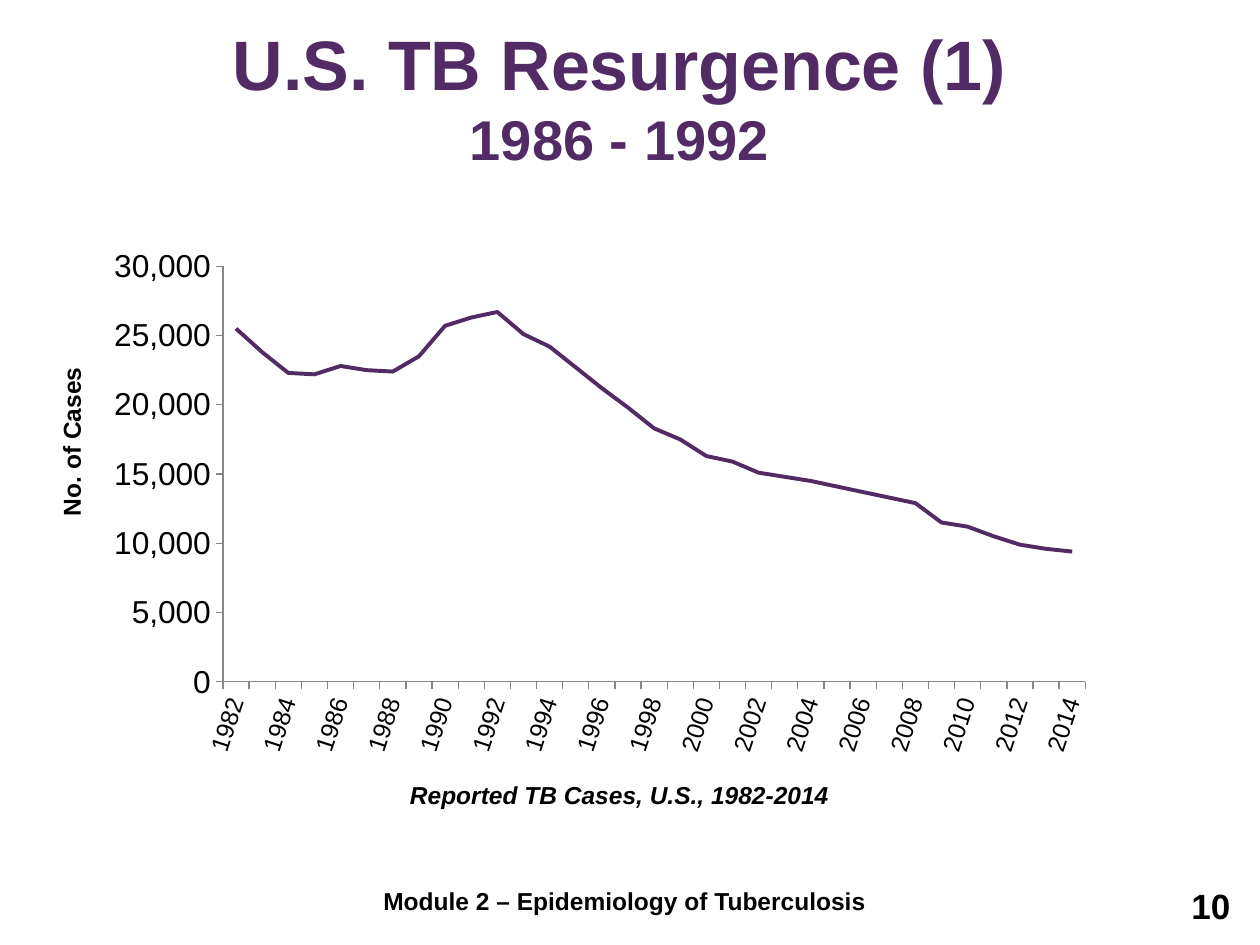
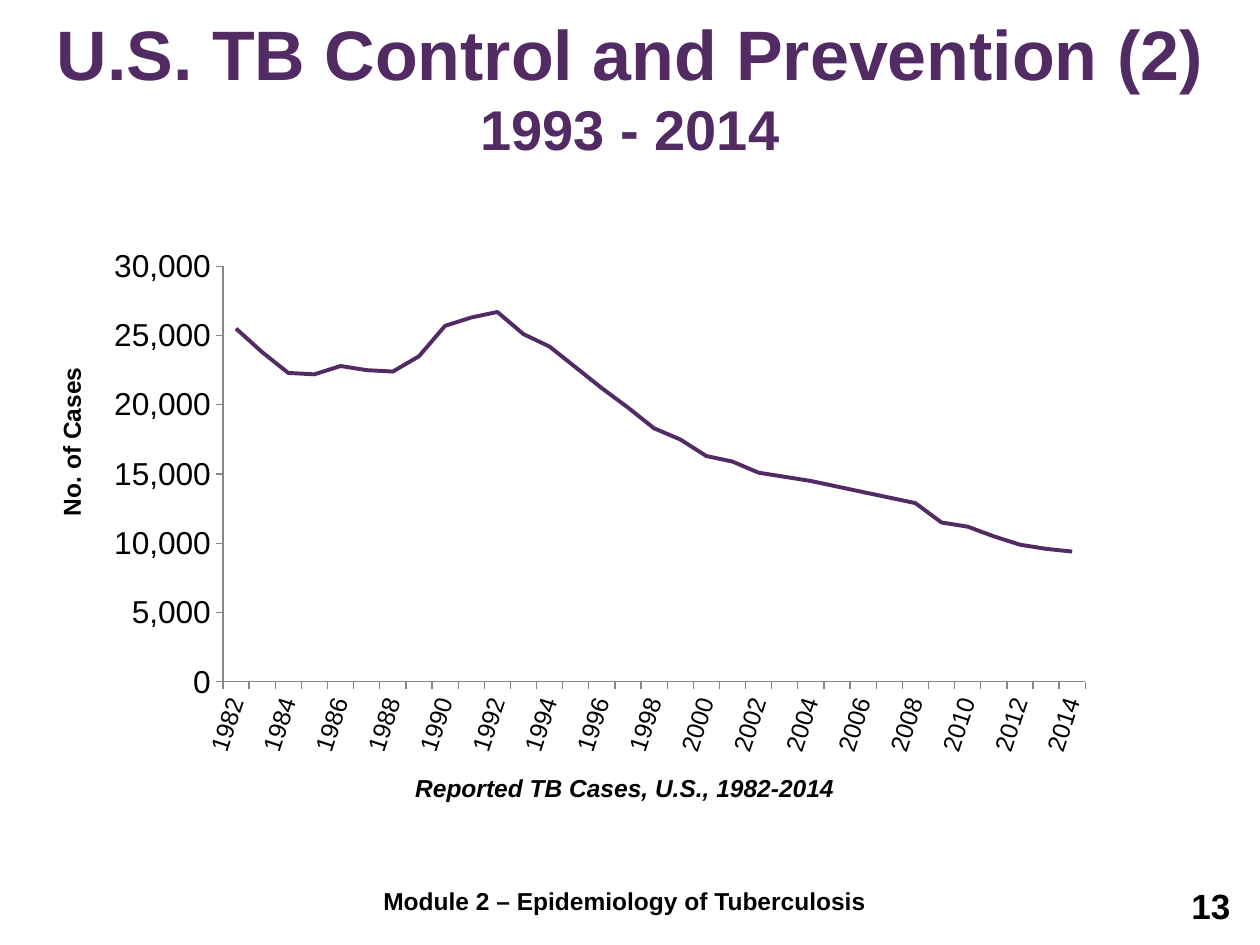
from lxml import etree
from pptx import Presentation
from pptx.chart.data import CategoryChartData
from pptx.dml.color import RGBColor
from pptx.enum.chart import XL_CHART_TYPE, XL_TICK_MARK
from pptx.enum.text import MSO_ANCHOR, MSO_AUTO_SIZE, PP_ALIGN
from pptx.oxml import parse_xml
from pptx.util import Inches, Pt

LINE_CHART = XL_CHART_TYPE.LINE
TICK_OUT, TICK_NONE = XL_TICK_MARK.OUTSIDE, XL_TICK_MARK.NONE
TOP, BOTTOM = MSO_ANCHOR.TOP, MSO_ANCHOR.BOTTOM
NO_FIT = MSO_AUTO_SIZE.NONE
LEFT, CENTER, RIGHT = PP_ALIGN.LEFT, PP_ALIGN.CENTER, PP_ALIGN.RIGHT

PURPLE, BLACK, GREY = "532B64", "000000", "868686"
FONT = "Arial"
COLUMNS, ROWS = 120, 90
CHART_NS = "http://schemas.openxmlformats.org/drawingml/2006/chart"

YEARS = [str(year) for year in range(1982, 2015)]
CASES = [
    25500, 23800, 22300, 22200, 22800, 22500, 22400, 23500, 25700, 26300, 26700,
    25100, 24200, 22700, 21200, 19800, 18300, 17500, 16300, 15900, 15100, 14800,
    14500, 14100, 13700, 13300, 12900, 11500, 11200, 10500, 9900, 9600, 9400,
]
PLOT_AREA = {"x": 0.127, "y": 0.053, "w": 0.852, "h": 0.787}

PAGES = [
    {"heading": "U.S. TB Resurgence (1)", "period": "1986 - 1992", "number": "10",
     "title_at": (5, 0, 108, 17), "caption_at": (33, 73.67, 52, 4)},
    {"heading": "U.S. TB Control and Prevention (2)", "period": "1993 - 2014", "number": "13",
     "title_at": (4, 1, 112, 15), "caption_at": (33.5, 73, 52, 4)},
]

deck = Presentation()
deck.slide_width, deck.slide_height = Inches(10), Inches(7.5)


def grid(left, top, width, height):
    column, row = deck.slide_width / COLUMNS, deck.slide_height / ROWS
    return [int(n * unit) for n, unit in zip((left, top, width, height), (column, row) * 2)]


def write(shape, *lines, sizes=(14,), color=BLACK, italic=False, align=CENTER, anchor=TOP):
    frame = shape.text_frame
    frame.word_wrap, frame.auto_size, frame.vertical_anchor = True, NO_FIT, anchor
    paragraph = frame.paragraphs[0]
    paragraph.alignment = align
    for index, (line, size) in enumerate(zip(lines, sizes)):
        if index:
            paragraph.add_line_break()
        run = paragraph.add_run()
        run.text = line
        run.font.name, run.font.size = FONT, Pt(size)
        run.font.bold, run.font.italic = True, italic
        run.font.color.rgb = RGBColor.from_string(color)


for page in PAGES:
    slide = deck.slides.add_slide(deck.slide_layouts[5])

    title = slide.shapes.title
    title.left, title.top, title.width, title.height = grid(*page["title_at"])
    write(title, page["heading"], page["period"], sizes=(40, 32), color=PURPLE, anchor=BOTTOM)

    footer = slide.shapes.add_textbox(*grid(21, 83.75, 77, 6.25))
    write(footer, "Module 2 – Epidemiology of Tuberculosis")
    page_number = slide.shapes.add_textbox(*grid(90.35, 83.6, 28, 6.25))
    write(page_number, page["number"], sizes=(20,), align=RIGHT)

    caption = slide.shapes.add_textbox(*grid(*page["caption_at"]))
    write(caption, "Reported TB Cases, U.S., 1982-2014", italic=True, anchor=BOTTOM)

    cases_label = slide.shapes.add_textbox(*grid(-4.2, 37.2, 22, 3.6))
    cases_label.rotation = 270
    write(cases_label, "No. of Cases", align=LEFT)
    label_frame = cases_label.text_frame
    label_frame.margin_left = label_frame.margin_right = Inches(0.07)
    label_frame.margin_top = label_frame.margin_bottom = Inches(0.03)

    case_data = CategoryChartData(number_format="#,##0")
    case_data.categories = YEARS
    case_data.add_series("Series 1", CASES)
    chart = slide.shapes.add_chart(LINE_CHART, *grid(9, 22.7, 96.4, 50.3), case_data).chart
    chart.has_legend = chart.has_title = False
    chart.font.name, chart.font.size = FONT, Pt(18.1)
    chart.font.color.rgb = RGBColor.from_string(BLACK)
    chart.plots[0].vary_by_categories = False

    trend = chart.plots[0].series[0]
    trend.smooth = False
    trend.format.line.width = Pt(2.25)
    trend.format.line.color.rgb = RGBColor.from_string(PURPLE)

    year_axis, case_axis = chart.category_axis, chart.value_axis
    for axis, size in ((year_axis, 14.1), (case_axis, 18.1)):
        axis.has_major_gridlines = False
        axis.major_tick_mark, axis.minor_tick_mark = TICK_OUT, TICK_NONE
        axis.format.line.width = Pt(0.75)
        axis.format.line.color.rgb = RGBColor.from_string(GREY)
        axis.tick_labels.font.name, axis.tick_labels.font.size = FONT, Pt(size)
        axis.tick_labels.font.color.rgb = RGBColor.from_string(BLACK)
    case_axis.minimum_scale, case_axis.maximum_scale, case_axis.major_unit = 0, 30000, 5000
    case_axis.tick_labels.number_format = "#,##0"
    case_axis.tick_labels.number_format_is_linked = False

    year_xml = year_axis._element
    label_body = year_xml.find(f"{{{CHART_NS}}}txPr")[0]
    label_body.set("rot", "-4320000")
    label_body.set("vert", "horz")
    no_multi_level = year_xml.find(f"{{{CHART_NS}}}noMultiLvlLbl")
    for tag, step in (("tickLblSkip", 2), ("tickMarkSkip", 1)):
        skip = etree.Element(f"{{{CHART_NS}}}{tag}", val=str(step))
        no_multi_level.addprevious(skip)

    plot_xml = chart._chartSpace.chart.plotArea
    for old_layout in plot_xml.findall(f"{{{CHART_NS}}}layout"):
        plot_xml.remove(old_layout)
    shares = "".join(f'<c:{side} val="{share}"/>' for side, share in PLOT_AREA.items())
    plot_xml.insert(0, parse_xml(
        f'<c:layout xmlns:c="{CHART_NS}"><c:manualLayout><c:layoutTarget val="inner"/>'
        f'<c:xMode val="edge"/><c:yMode val="edge"/>{shares}</c:manualLayout></c:layout>'))

deck.save("out.pptx")
